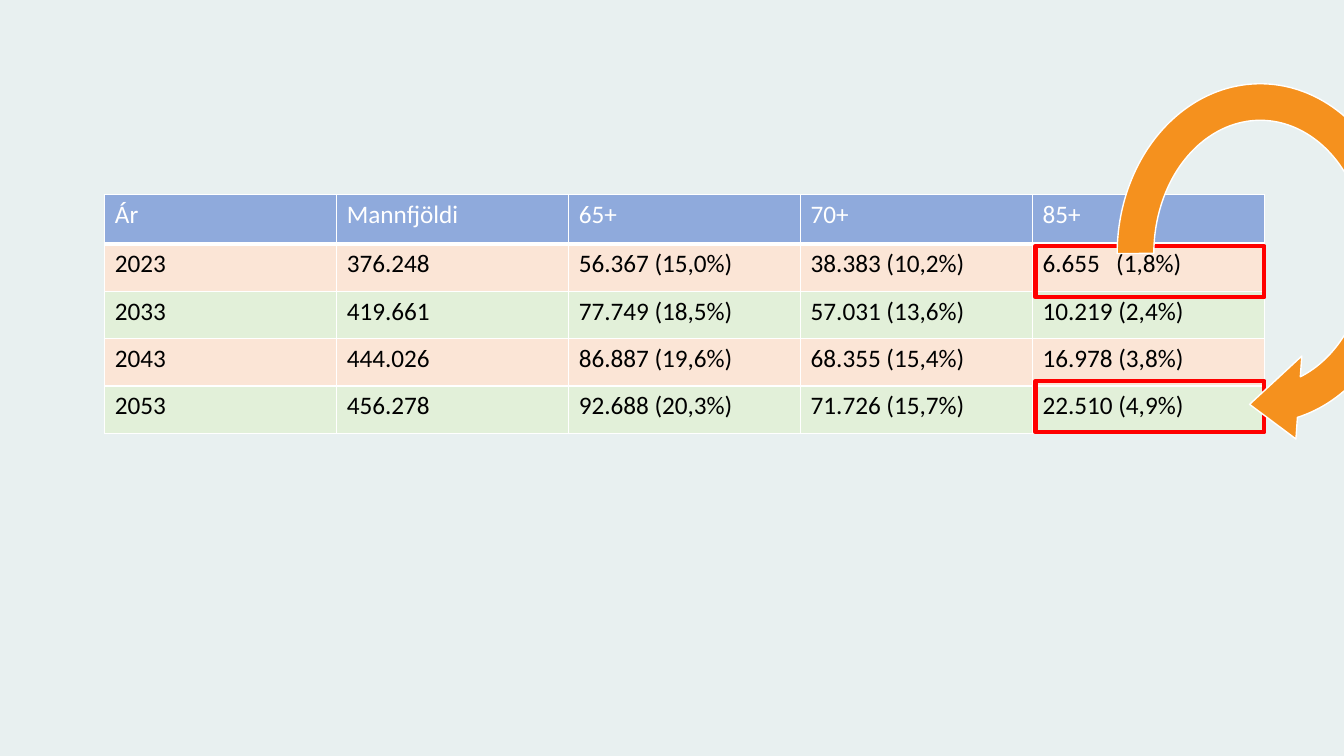
import pptx
import pptx.dml.color
import pptx.enum.shapes
import pptx.oxml
import pptx.oxml.ns
import pptx.util
from dataclasses import dataclass

Inches = pptx.util.Inches
Pt = pptx.util.Pt
Color = pptx.dml.color.RGBColor.from_string
Shapes = pptx.enum.shapes.MSO_SHAPE


@dataclass(frozen=True)
class Theme:
    background: str = "E8F0F0"
    header: str = "8FAADC"
    bands: tuple = ("FBE5D6", "E2F0D9")
    white: str = "FFFFFF"
    black: str = "000000"
    highlight: str = "FF0000"
    arrow: str = "F5911E"
    font: str = "Calibri"
    size: int = 18


theme = Theme()
namespace = pptx.oxml.ns.nsdecls("a")


def add_border(cell, side, points):
    """Give one side of a table cell a white line."""
    cell._tc.get_or_add_tcPr().append(pptx.oxml.parse_xml(
        f'<a:ln{side} {namespace} w="{Pt(points)}"><a:solidFill>'
        f'<a:srgbClr val="{theme.white}"/></a:solidFill></a:ln{side}>'))


# Page
deck = pptx.Presentation()
deck.slide_width = Inches(13.33)
deck.slide_height = Inches(7.5)
page = deck.slides.add_slide(deck.slide_layouts[6])
page.background.fill.solid()
page.background.fill.fore_color.rgb = Color(theme.background)

# Population table
population = [
    ["Ár", "Mannfjöldi", "65+", "70+", "85+"],
    ["2023", "376.248", "56.367 (15,0%)", "38.383 (10,2%)", "6.655\t(1,8%)"],
    ["2033", "419.661", "77.749 (18,5%)", "57.031 (13,6%)", "10.219 (2,4%)"],
    ["2043", "444.026", "86.887 (19,6%)", "68.355 (15,4%)", "16.978 (3,8%)"],
    ["2053", "456.278", "92.688 (20,3%)", "71.726 (15,7%)", "22.510 (4,9%)"],
]
table = page.shapes.add_table(
    len(population), len(population[0]),
    Inches(1.04), Inches(1.93), Inches(11.5), Inches(2.37)).table
for column in table.columns:
    column.width = Inches(2.3)

for row_number, values in enumerate(population):
    is_header = row_number == 0
    table.rows[row_number].height = Inches(0.49 if is_header else 0.47)
    fill_color = theme.header if is_header else theme.bands[(row_number - 1) % 2]
    for column_number, value in enumerate(values):
        cell = table.cell(row_number, column_number)
        # Borders come before the fill; a thicker rule parts header and body
        add_border(cell, "L", 1)
        add_border(cell, "R", 1)
        add_border(cell, "T", 3 if row_number == 1 else 1)
        add_border(cell, "B", 3 if is_header else 1)
        cell.fill.solid()
        cell.fill.fore_color.rgb = Color(fill_color)
        para = cell.text_frame.paragraphs[0]
        if "\t" in value:
            para._p.get_or_add_pPr().append(pptx.oxml.parse_xml(
                f'<a:tabLst {namespace}><a:tab pos="{Inches(0.73)}" algn="l"/></a:tabLst>'))
        span = para.add_run()
        span.text = value
        span.font.name = theme.font
        span.font.size = Pt(theme.size)
        span.font.bold = False
        span.font.color.rgb = Color(theme.white if is_header else theme.black)

# Red frames around the last and first 85+ values
for frame_top in (3.78, 2.44):
    frame = page.shapes.add_shape(
        Shapes.RECTANGLE, Inches(10.27), Inches(frame_top), Inches(2.27), Inches(0.51))
    frame.shadow.inherit = False
    frame.fill.background()
    frame.line.color.rgb = Color(theme.highlight)
    frame.line.width = Pt(3)

# Curved arrow from 2023 to 2053
arrow = page.shapes.add_shape(
    Shapes.CIRCULAR_ARROW, Inches(10.85), Inches(0.6), Inches(3.3), Inches(3.83))
for index, amount in enumerate((0.11, 11.42, 45, 108, 0.125)):
    arrow.adjustments[index] = amount
arrow.shadow.inherit = False
arrow.fill.solid()
arrow.fill.fore_color.rgb = Color(theme.arrow)
arrow.line.color.rgb = Color(theme.white)
arrow.line.width = Pt(1)

deck.save("out.pptx")
